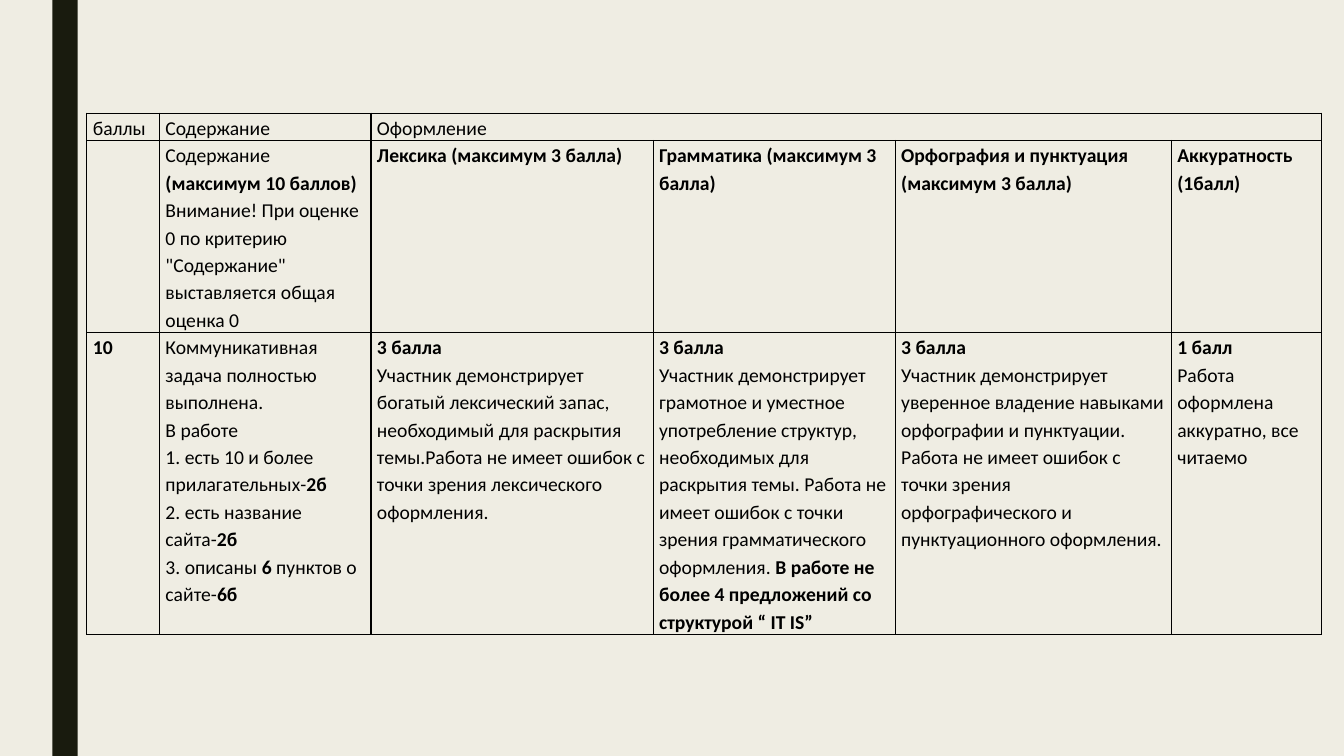
from dataclasses import dataclass

from lxml import etree
from pptx import Presentation
from pptx.dml.color import RGBColor
from pptx.enum import shapes
from pptx.oxml import ns
from pptx.util import Cm, Pt


@dataclass(frozen=True)
class Theme:
    back: str = "EFEDE3"
    bar: str = "191B0E"
    ink: str = "000000"
    font: str = "Calibri"
    size: float = 14
    lead: float = 1.15
    rule: float = 1
    inset: float = 0.15


THEME = Theme()

# Column widths and least row heights, in cm
COLS = [1.83, 5.33, 7.11, 6.1, 6.96, 3.78]
ROWS = [0.58, 4.14, 6.53]

# Each cell is a list of paragraphs; words between asterisks are bold
GRID = [
    [["баллы"], ["Содержание"], ["Оформление"], [], [], []],
    [
        [],
        ["Содержание", "*(максимум 10 баллов)*",
         "Внимание! При оценке 0 по критерию",
         '"Содержание" выставляется общая', "оценка 0"],
        ["*Лексика (максимум 3 балла)*"],
        ["*Грамматика (максимум 3 балла)*"],
        ["*Орфография и пунктуация (максимум 3 балла)*"],
        ["*Аккуратность*", "*(1балл)*"],
    ],
    [
        ["*10*"],
        ["Коммуникативная задача полностью", "выполнена.", "В работе",
         "1. есть 10 и более прилагательных-*2б*",
         "2. есть название сайта-*2б*",
         "3. описаны *6* пунктов о сайте-*6б*"],
        ["*3 балла*",
         "Участник демонстрирует богатый лексический запас, необходимый для "
         "раскрытия темы.Работа не имеет ошибок с точки зрения лексического "
         "оформления."],
        ["*3 балла*",
         "Участник демонстрирует грамотное и уместное употребление структур, "
         "необходимых для раскрытия темы. Работа не имеет ошибок с точки "
         "зрения грамматического оформления. *В работе не более 4 "
         "предложений со структурой “ IT IS”*"],
        ["*3 балла*",
         "Участник демонстрирует уверенное владение навыками орфографии и "
         "пунктуации. Работа не имеет ошибок с точки зрения "
         "орфографического и пунктуационного оформления."],
        ["*1 балл*", "Работа оформлена аккуратно, все читаемо"],
    ],
]


def color(code):
    return RGBColor.from_string(code)


def add_bar(slide, left, top, width, height):
    bar = slide.shapes.add_shape(
        shapes.MSO_SHAPE.RECTANGLE, left, top, width, height)
    bar.shadow.inherit = False
    bar.fill.solid()
    bar.fill.fore_color.rgb = color(THEME.bar)
    bar.line.fill.background()


def add_runs(para, line):
    para.line_spacing = THEME.lead
    for i, part in enumerate(line.split("*")):
        if part:
            run = para.add_run()
            run.text = part
            run.font.name = THEME.font
            run.font.size = Pt(THEME.size)
            run.font.bold = i % 2 == 1
            run.font.color.rgb = color(THEME.ink)


def set_rules(cell):
    props = cell._tc.get_or_add_tcPr()
    for i, side in enumerate(("lnL", "lnR", "lnT", "lnB")):
        line = etree.Element(ns.qn("a:" + side), w=str(Pt(THEME.rule)))
        fill = etree.SubElement(line, ns.qn("a:solidFill"))
        etree.SubElement(fill, ns.qn("a:srgbClr"), val=THEME.ink)
        props.insert(i, line)


def fill_cell(cell, lines):
    cell.fill.background()
    cell.margin_left = cell.margin_right = Cm(THEME.inset)
    cell.margin_top = cell.margin_bottom = 0
    set_rules(cell)
    frame = cell.text_frame
    for i, line in enumerate(lines):
        add_runs(frame.add_paragraph() if i else frame.paragraphs[0], line)


def add_grid(slide, left, top):
    table = slide.shapes.add_table(
        len(ROWS), len(COLS), left, top, Cm(sum(COLS)), Cm(sum(ROWS))).table
    table.first_row = table.horz_banding = False
    for col, width in zip(table.columns, COLS):
        col.width = Cm(width)
    for row, height, data in zip(table.rows, ROWS, GRID):
        row.height = Cm(height)
        for cell, lines in zip(row.cells, data):
            fill_cell(cell, lines)
    # The layout heading spans its four criteria
    table.cell(0, 2).merge(table.cell(0, 5))


def main():
    deck = Presentation()
    deck.slide_width, deck.slide_height = Cm(33.87), Cm(19.05)
    slide = deck.slides.add_slide(deck.slide_layouts[6])

    # Background and side bar
    slide.background.fill.solid()
    slide.background.fill.fore_color.rgb = color(THEME.back)
    add_bar(slide, Cm(1.32), 0, Cm(0.64), deck.slide_height)

    # Marking criteria
    add_grid(slide, Cm(2.19), Cm(2.85))
    deck.save("out.pptx")


if __name__ == "__main__":
    main()
